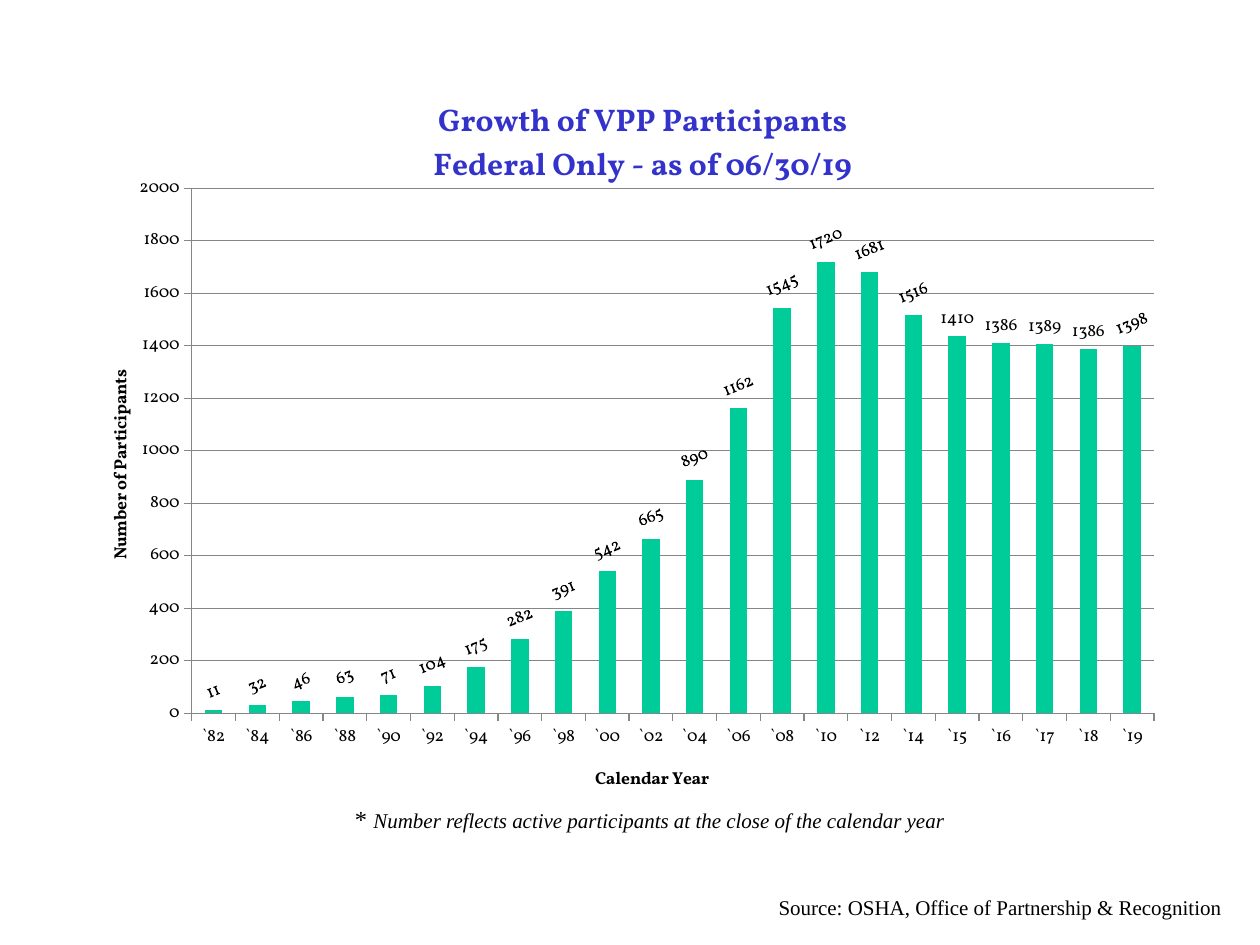
"""Build the slide showing the growth of VPP participants by calendar year."""
from lxml import etree
from pptx import Presentation
from pptx.chart.data import CategoryChartData
from pptx.dml.color import RGBColor
from pptx.enum.chart import XL_CHART_TYPE, XL_LABEL_POSITION, XL_TICK_MARK
from pptx.oxml.ns import qn
from pptx.util import Pt

COLUMNS = XL_CHART_TYPE.COLUMN_CLUSTERED
OUTSIDE_END = XL_LABEL_POSITION.OUTSIDE_END
TICK_OUT = XL_TICK_MARK.OUTSIDE
TICK_NONE = XL_TICK_MARK.NONE
BLACK = RGBColor(0, 0, 0)
BLUE = RGBColor(0x33, 0x33, 0xCC)
GREEN = RGBColor(0, 0xCC, 0x99)
GREY = RGBColor(0x86, 0x86, 0x86)
LABEL_ROTATION = "-1320000"

YEARS = [*range(1982, 2015, 2), *range(2015, 2020)]
PARTICIPANTS = [11, 32, 46, 63, 71, 104, 175, 282, 391, 542, 665, 890, 1162,
                1545, 1720, 1681, 1516, 1437, 1410, 1407, 1386, 1398]
CORRECTED_LABELS = {17: "1410", 18: "1386", 19: "1389", 20: "1386"}


class SlideBuilder:
    """Hold the style and the current slide."""

    text_font = "Times New Roman"
    chart_font = "Vollkorn"

    def __init__(self, page):
        self.page = page

    def style(self, font, name, size, color=BLACK, bold=None):
        font.name, font.size, font.bold = name, Pt(size), bold
        font.color.rgb = color

    def text(self, left, top, width, height, spans):
        box = self.page.shapes.add_textbox(Pt(left), Pt(top), Pt(width), Pt(height))
        box.text_frame.word_wrap = True
        para = box.text_frame.paragraphs[0]
        for words, size, italic in spans:
            span = para.add_run()
            span.text = words
            self.style(span.font, self.text_font, size)
            span.font.italic = italic

    def place(self, element, **fractions):
        for old in element.findall(qn("c:layout")):
            element.remove(old)
        layout = etree.Element(qn("c:layout"))
        element.insert(0 if element.find(qn("c:tx")) is None else 1, layout)
        manual = etree.SubElement(layout, qn("c:manualLayout"))
        if "w" in fractions:
            etree.SubElement(manual, qn("c:layoutTarget")).set("val", "inner")
        for side in "xy":
            etree.SubElement(manual, qn(f"c:{side}Mode")).set("val", "edge")
        for side, fraction in fractions.items():
            etree.SubElement(manual, qn(f"c:{side}")).set("val", str(fraction))

    def title(self, title, words, size, color, x, y):
        title.text_frame.text = words
        for para in title.text_frame.paragraphs:
            self.style(para.font, self.chart_font, size, color, True)
        self.place(title._element, x=x, y=y)

    def axis(self, axis, words, x, y):
        self.title(axis.axis_title, words, 10, BLACK, x, y)
        axis.major_tick_mark, axis.minor_tick_mark = TICK_OUT, TICK_NONE
        self.line(axis.format.line)

    def line(self, line):
        line.color.rgb, line.width = GREY, Pt(0.75)

    def labels(self, series, corrected):
        labels = series.data_labels
        labels.show_value, labels.position = True, OUTSIDE_END
        self.style(labels.font, self.chart_font, 10)
        labels._element.find(qn("c:txPr")).find(qn("a:bodyPr")).set("rot", LABEL_ROTATION)
        for index, words in corrected.items():
            label = series.points[index].data_label
            label.text_frame.text = words
            label.text_frame._txBody.bodyPr.set("rot", "0")
            self.style(label.text_frame.paragraphs[0].font, self.chart_font, 10)
            label.position = OUTSIDE_END

    def chart(self, left, top, width, height):
        data = CategoryChartData()
        data.categories = [f"`{year % 100:02}" for year in YEARS]
        data.add_series("Series 1", PARTICIPANTS)
        chart = self.page.shapes.add_chart(
            COLUMNS, Pt(left), Pt(top), Pt(width), Pt(height), data).chart
        self.style(chart.font, self.chart_font, 10)
        chart.has_legend = False
        self.title(chart.chart_title, "Growth of VPP Participants\nFederal Only - as of 06/30/19",
                   18, BLUE, 0.31, 0.03)
        self.axis(chart.category_axis, "Calendar Year", 0.46, 0.96)
        self.axis(chart.value_axis, "Number of Participants", 0.01, 0.41)
        values = chart.value_axis
        values.minimum_scale, values.maximum_scale, values.major_unit = 0, 2000, 200
        self.line(values.major_gridlines.format.line)
        plot = chart.plots[0]
        plot.gap_width, plot.vary_by_categories = 150, False
        series = plot.series[0]
        series.format.fill.solid()
        series.format.fill.fore_color.rgb = GREEN
        self.labels(series, CORRECTED_LABELS)
        self.place(chart._chartSpace.chart.plotArea, x=0.09, y=0.16, w=0.89, h=0.73)


def main():
    deck = Presentation()
    deck.slide_width, deck.slide_height = Pt(720), Pt(540)
    builder = SlideBuilder(deck.slides.add_slide(deck.slide_layouts[6]))
    builder.text(437.8, 507.6, 282.2, 21.6,
                 [("Source: OSHA, Office of Partnership & Recognition", 12, None)])
    builder.text(195.8, 455.8, 383.8, 23.8, [
        ("* ", 14, None),
        ("Number reflects active participants at the close of the calendar year", 12, True)])
    builder.chart(54, 41.8, 617.8, 414)
    deck.save("out.pptx")


if __name__ == "__main__":
    main()
